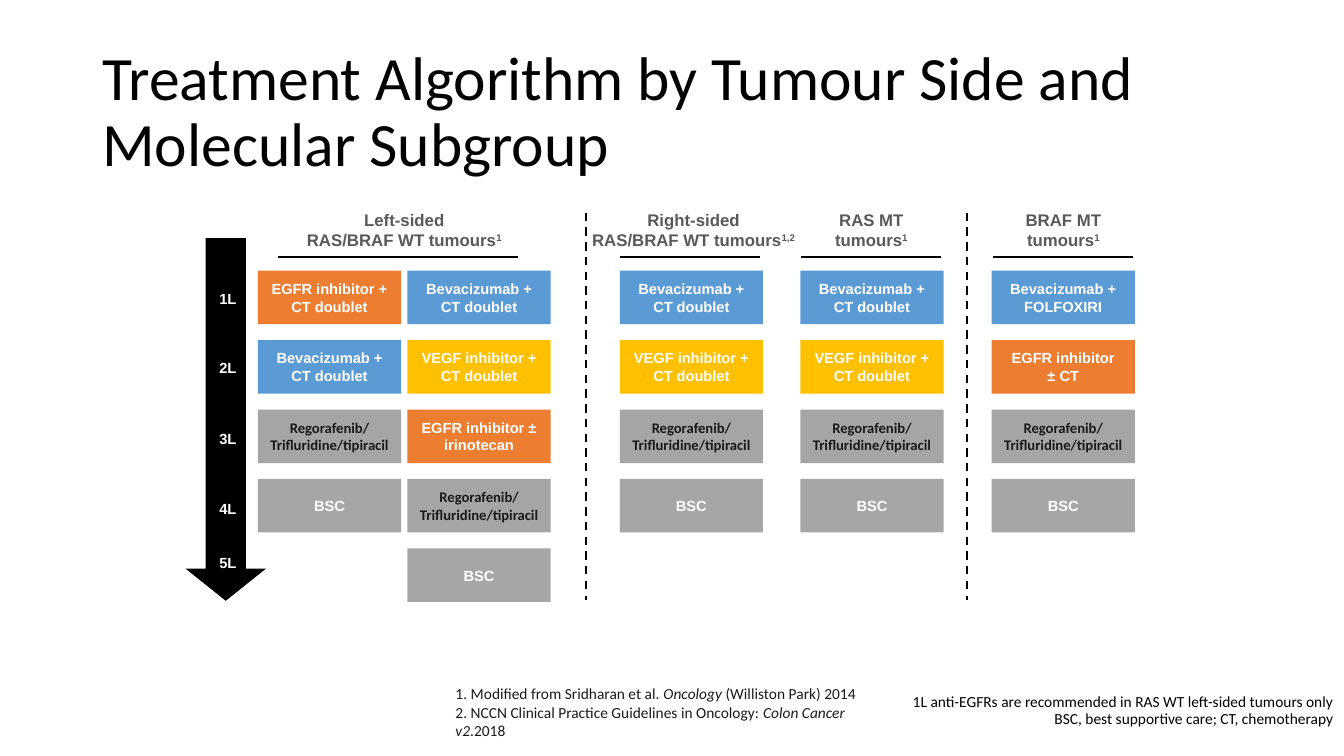
from lxml.etree import SubElement
from pptx import Presentation
from pptx.dml.color import RGBColor
from pptx.enum.dml import MSO_LINE
from pptx.enum.shapes import MSO_CONNECTOR, MSO_SHAPE
from pptx.enum.text import MSO_ANCHOR, PP_ALIGN
from pptx.oxml.ns import qn
from pptx.util import Cm, Pt

BLACK = RGBColor(0x00, 0x00, 0x00)
WHITE = RGBColor(0xFF, 0xFF, 0xFF)
INK = RGBColor(0x1A, 0x1A, 0x1A)
HEADING_GREY = RGBColor(0x59, 0x59, 0x59)
BLUE = RGBColor(0x5B, 0x9B, 0xD5)
ORANGE = RGBColor(0xED, 0x7D, 0x31)
YELLOW = RGBColor(0xFF, 0xC0, 0x00)
DRUG_GREY = RGBColor(0xA5, 0xA5, 0xA5)
CARE_GREY = RGBColor(0xA6, 0xA6, 0xA6)

TITLE = "Treatment Algorithm by Tumour Side and Molecular Subgroup"

BEV_CT = ("Bevacizumab +\vCT doublet", BLUE, WHITE, "Arial")
BEV_FOLFOXIRI = ("Bevacizumab +\vFOLFOXIRI", BLUE, WHITE, "Arial")
VEGF_CT = ("VEGF inhibitor +\vCT doublet", YELLOW, WHITE, "Arial")
EGFR_DOUBLET = ("EGFR inhibitor +\vCT doublet", ORANGE, WHITE, "Arial")
EGFR_IRINOTECAN = ("EGFR inhibitor ±\virinotecan", ORANGE, WHITE, "Arial")
EGFR_CT = ("EGFR inhibitor\v± CT", ORANGE, WHITE, "Arial")
LATE_DRUGS = ("Regorafenib/\vTrifluridine/tipiracil", DRUG_GREY, INK, "Calibri")
BSC = ("BSC", CARE_GREY, WHITE, "Arial")

PATHWAYS = [
    (6.5, [EGFR_DOUBLET, BEV_CT, LATE_DRUGS, BSC]),
    (10.27, [BEV_CT, VEGF_CT, EGFR_IRINOTECAN, LATE_DRUGS, BSC]),
    (15.62, [BEV_CT, VEGF_CT, LATE_DRUGS, BSC]),
    (20.17, [BEV_CT, VEGF_CT, LATE_DRUGS, BSC]),
    (24.99, [BEV_FOLFOXIRI, EGFR_CT, LATE_DRUGS, BSC]),
]

SUBGROUPS = [
    ("Left-sided\vRAS/BRAF WT tumours", "1", 10.19, 5.28, 7.01, 13.06),
    ("Right-sided\vRAS/BRAF WT tumours", "1,2", 17.48, 6.05, 15.62, 19.15),
    ("RAS MT\vtumours", "1", 21.96, 3.73, 20.19, 23.72),
    ("BRAF MT\vtumours", "1", 26.8, 3.15, 25.02, 28.55),
]

LINES_OF_THERAPY = [("1L", 7.16), ("2L", 8.92), ("3L", 10.69), ("4L", 12.45), ("5L", 13.82)]
DIVIDERS = [14.76, 24.38]

REFERENCES = [
    [("1. Modified from Sridharan et al. ", False), ("Oncology", True),
     (" (Williston Park) 2014", False)],
    [("2. NCCN Clinical Practice Guidelines in Oncology: ", False),
     ("Colon Cancer v2", True), (".2018", False)],
]
NOTE = ("1L anti-EGFRs are recommended in RAS WT left-sided tumours only\v"
        "BSC, best supportive care; CT, chemotherapy")

FIRST_ROW, ROW_PITCH = 6.82, 1.75
BOX_WIDTH, BOX_HEIGHT = 3.61, 1.35
HEADING_TOP, HEADING_HEIGHT, RULE_Y = 5.13, 1.32, 6.48
DIVIDER_TOP, DIVIDER_BOTTOM = 5.36, 15.11

deck = Presentation()
deck.slide_width, deck.slide_height = Cm(33.87), Cm(19.05)
slide = deck.slides.add_slide(deck.slide_layouts[6])


def style(paragraph, font_name, size, color, bold=False):
    for run in paragraph.runs:
        run.font.name, run.font.size = font_name, Pt(size)
        run.font.bold, run.font.color.rgb = bold, color


def textbox(left, top, width, height, anchor=MSO_ANCHOR.MIDDLE, wrap=True):
    frame = slide.shapes.add_textbox(Cm(left), Cm(top), Cm(width), Cm(height)).text_frame
    frame.word_wrap, frame.vertical_anchor = wrap, anchor
    return frame


def block(preset, left, top, width, height, fill):
    shape = slide.shapes.add_shape(preset, Cm(left), Cm(top), Cm(width), Cm(height))
    shape.shadow.inherit = False
    shape.fill.solid()
    shape.fill.fore_color.rgb = fill
    shape.line.fill.background()
    return shape


def rule(x1, y1, x2, y2, dash=None):
    line = slide.shapes.add_connector(MSO_CONNECTOR.STRAIGHT, Cm(x1), Cm(y1), Cm(x2), Cm(y2))
    line.line.color.rgb, line.line.width = BLACK, Pt(1.5)
    if dash:
        line.line.dash_style = dash
    SubElement(line._element.spPr, qn("a:effectLst"))


heading = textbox(2.33, 1.02, 29.21, 3.68).paragraphs[0]
heading.text = TITLE
heading.line_spacing = 0.9
style(heading, "Calibri", 44, BLACK)

arrow = block(MSO_SHAPE.DOWN_ARROW, 4.68, 6, 2.02, 9.14, BLACK)
arrow.adjustments[0], arrow.adjustments[1] = 0.5, 0.4
for label, top in LINES_OF_THERAPY:
    paragraph = textbox(5.28, top, 0.95, 0.71, wrap=False).paragraphs[0]
    paragraph.text = label
    style(paragraph, "Arial", 10.5, WHITE, bold=True)

for left, treatments in PATHWAYS:
    for row, (treatment, fill, color, font_name) in enumerate(treatments):
        box = block(MSO_SHAPE.RECTANGLE, left, FIRST_ROW + row * ROW_PITCH,
                    BOX_WIDTH, BOX_HEIGHT, fill)
        frame = box.text_frame
        frame.margin_left = frame.margin_right = 0
        frame.vertical_anchor = MSO_ANCHOR.MIDDLE
        paragraph = frame.paragraphs[0]
        paragraph.text = treatment
        paragraph.alignment = PP_ALIGN.CENTER
        style(paragraph, font_name, 10.5, color, bold=True)

for subgroup, citation, center, width, rule_left, rule_right in SUBGROUPS:
    frame = textbox(center - width / 2, HEADING_TOP, width, HEADING_HEIGHT)
    frame.margin_left = frame.margin_right = Cm(0.15)
    paragraph = frame.paragraphs[0]
    paragraph.text = subgroup
    paragraph.alignment = PP_ALIGN.CENTER
    superscript = paragraph.add_run()
    superscript.text = citation
    style(paragraph, "Arial", 12, HEADING_GREY, bold=True)
    superscript._r.get_or_add_rPr().set("baseline", "30000")
    rule(rule_left, RULE_Y, rule_right, RULE_Y)

for x in DIVIDERS:
    rule(x, DIVIDER_TOP, x, DIVIDER_BOTTOM, MSO_LINE.DASH)

references = textbox(11.23, 17.12, 11.43, 1.65, MSO_ANCHOR.TOP)
for index, reference in enumerate(REFERENCES):
    paragraph = references.add_paragraph() if index else references.paragraphs[0]
    for words, italic in reference:
        run = paragraph.add_run()
        run.text = words
        run.font.italic = italic
    style(paragraph, "Calibri", 11, INK)

note = textbox(18.39, 17.37, 15.47, 1.6, MSO_ANCHOR.TOP).paragraphs[0]
note.text = NOTE
note.alignment = PP_ALIGN.RIGHT
note.line_spacing = 0.9
style(note, "Calibri", 11, BLACK)

deck.save("out.pptx")
